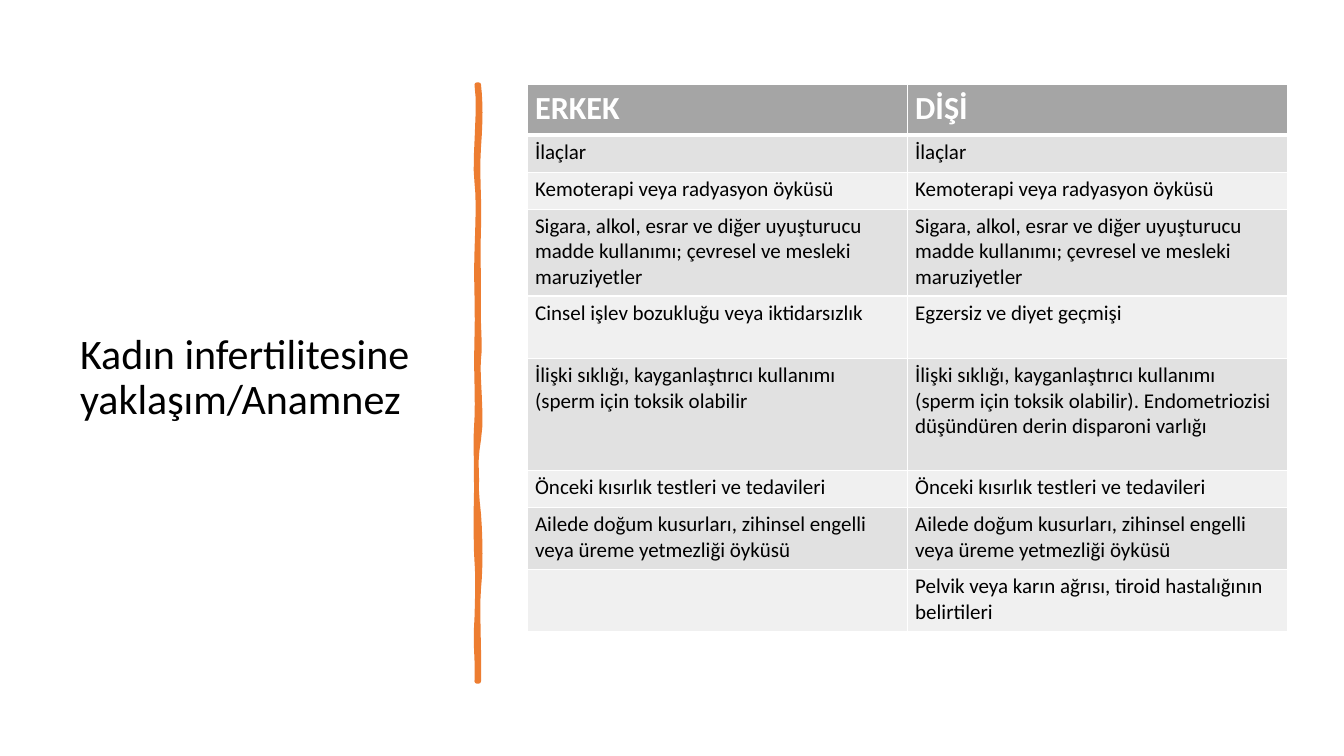
"""Build the slide comparing male and female history taking in infertility."""
from lxml import etree
from pptx import Presentation
from pptx import util as u
from pptx.dml.color import RGBColor
from pptx.enum import text
from pptx.oxml.ns import qn

TITLE = "Kadın infertilitesine yaklaşım/Anamnez"
SUBSTANCES = ("Sigara, alkol, esrar ve diğer uyuşturucu madde kullanımı;\u00a0çevresel "
              "ve mesleki maruziyetler")
FAMILY = "Ailede doğum kusurları, zihinsel engelli veya üreme yetmezliği öyküsü"
INTERCOURSE = "İlişki sıklığı, kayganlaştırıcı kullanımı (sperm için toksik olabilir"
HISTORY = [
    (36, "ERKEK", "DİŞİ"),
    (26.5, "İlaçlar", "İlaçlar"),
    (26.5, "Kemoterapi veya radyasyon öyküsü", "Kemoterapi veya radyasyon öyküsü"),
    (62, SUBSTANCES, SUBSTANCES),
    (44.5, "Cinsel işlev bozukluğu veya iktidarsızlık", "Egzersiz ve diyet geçmişi"),
    (80, INTERCOURSE,
     INTERCOURSE + ").\u00a0Endometriozisi düşündüren derin disparoni varlığı"),
    (26.5, "Önceki kısırlık testleri ve tedavileri", "Önceki kısırlık testleri ve tedavileri"),
    (44.5, FAMILY, FAMILY),
    (44.5, "", "Pelvik veya karın ağrısı, tiroid hastalığının belirtileri"),
]
COLORS = {"text": "000000", "white": "FFFFFF", "header": "A5A5A5",
          "odd": "E1E1E1", "even": "F0F0F0", "stroke": "ED7D31"}
FONT = "Calibri"
RIGHT_EDGE = [
    (342, 60.5), (343.4, 73.4), (343.4, 85.7), (342, 105.1),
    (340.6, 124.6), (342.7, 140.4), (342, 162.7), (341.3, 185), (342, 188.6), (342, 211.7),
    (341.3, 234), (343.4, 246.2), (342, 256.3), (340.6, 266.4), (344.9, 298.1), (342, 313.9),
    (339.1, 329), (339.8, 348.5), (342, 367.2), (343.4, 385.9), (343.4, 406.1), (342, 420.5),
    (340.6, 434.2), (342.7, 468), (342, 486.7),
]
LEFT_EDGE = [
    (340.6, 486.7), (341.3, 465.1), (339.1, 463.7), (340.6, 441.4),
    (341.3, 419.8), (341.3, 410.4), (340.6, 401), (339.8, 391.7), (339.8, 356.4), (340.6, 343.4),
    (340.6, 330.5), (339.1, 320.4), (340.6, 298.8), (341.3, 277.9), (339.8, 268.6), (340.6, 241.2),
    (341.3, 214.6), (339.8, 202.3), (340.6, 180), (341.3, 157), (342, 144), (340.6, 130.3),
    (338.4, 117.4), (343.4, 74.9), (340.6, 60.5),
]


def rgb(name):
    return RGBColor.from_string(COLORS[name])


def style_font(font, size, color, bold=False):
    font.name, font.size, font.bold = FONT, u.Pt(size), bold
    font.color.rgb = rgb(color)


def trace(controls, steps=6):
    points = [controls[0]]
    for start in range(0, len(controls) - 1, 3):
        curve = controls[start:start + 4]
        for step in range(1, steps + 1):
            t = step / steps
            weights = ((1 - t) ** 3, 3 * t * (1 - t) ** 2, 3 * t * t * (1 - t), t ** 3)
            points.append(tuple(sum(w * p[axis] for w, p in zip(weights, curve))
                                for axis in (0, 1)))
    return [(u.Pt(x), u.Pt(y)) for x, y in points]


def add_title(slide):
    title = slide.shapes.title
    title.left, title.top, title.width, title.height = map(u.Pt, (50, 50.5, 269, 440))
    title.text_frame.text = TITLE
    title.text_frame.word_wrap = True
    title.text_frame.auto_size = text.MSO_AUTO_SIZE.NONE
    title.text_frame.vertical_anchor = text.MSO_ANCHOR.MIDDLE
    heading = title.text_frame.paragraphs[0]
    heading.alignment = text.PP_ALIGN.LEFT
    heading.line_spacing = 0.9
    style_font(heading.runs[0].font, 30, "text")


def add_brush_stroke(slide):
    outline = trace(RIGHT_EDGE) + trace(LEFT_EDGE)
    builder = slide.shapes.build_freeform(*outline[0], scale=1.0)
    builder.add_line_segments(outline[1:], close=True)
    stroke = builder.convert_to_shape()
    stroke.shadow.inherit = False
    stroke.fill.solid()
    stroke.fill.fore_color.rgb = rgb("stroke")
    stroke.line.color.rgb = rgb("stroke")
    stroke.line.width = u.Pt(3.25)
    etree.SubElement(stroke.line._get_or_add_ln(), qn("a:round"))


def add_borders(cell, widths):
    properties = cell._tc.get_or_add_tcPr()
    for side, width in zip("LRTB", widths):
        border = etree.SubElement(properties, qn(f"a:ln{side}"), w=str(u.Pt(width)))
        fill = etree.SubElement(border, qn("a:solidFill"))
        etree.SubElement(fill, qn("a:srgbClr"), val=COLORS["white"])


def add_history(slide):
    heights = [row[0] for row in HISTORY]
    history = slide.shapes.add_table(len(HISTORY), 2, u.Pt(376.5), u.Pt(60.5),
                                     u.Pt(543), u.Pt(sum(heights))).table
    for column in history.columns:
        column.width = u.Pt(271.5)
    for index, (height, *entries) in enumerate(HISTORY):
        history.rows[index].height = u.Pt(height)
        header = index == 0
        shade = "header" if header else "odd" if index % 2 else "even"
        for column, entry in enumerate(entries):
            cell = history.cell(index, column)
            cell.margin_left = cell.margin_right = u.Pt(5.75)
            cell.margin_top = cell.margin_bottom = u.Pt(2.9)
            add_borders(cell, (1, 1, 3 if index == 1 else 1, 3 if header else 1))
            cell.fill.solid()
            cell.fill.fore_color.rgb = rgb(shade)
            cell.text_frame.text = entry
            for run in cell.text_frame.paragraphs[0].runs:
                style_font(run.font, 23 if header else 15,
                           "white" if header else "text", header)


def main():
    deck = Presentation()
    deck.slide_width, deck.slide_height = u.Pt(960), u.Pt(540)
    slide = deck.slides.add_slide(deck.slide_layouts[5])
    slide.background.fill.solid()
    slide.background.fill.fore_color.rgb = rgb("white")
    add_title(slide)
    add_brush_stroke(slide)
    add_history(slide)
    deck.save("out.pptx")


if __name__ == "__main__":
    main()
